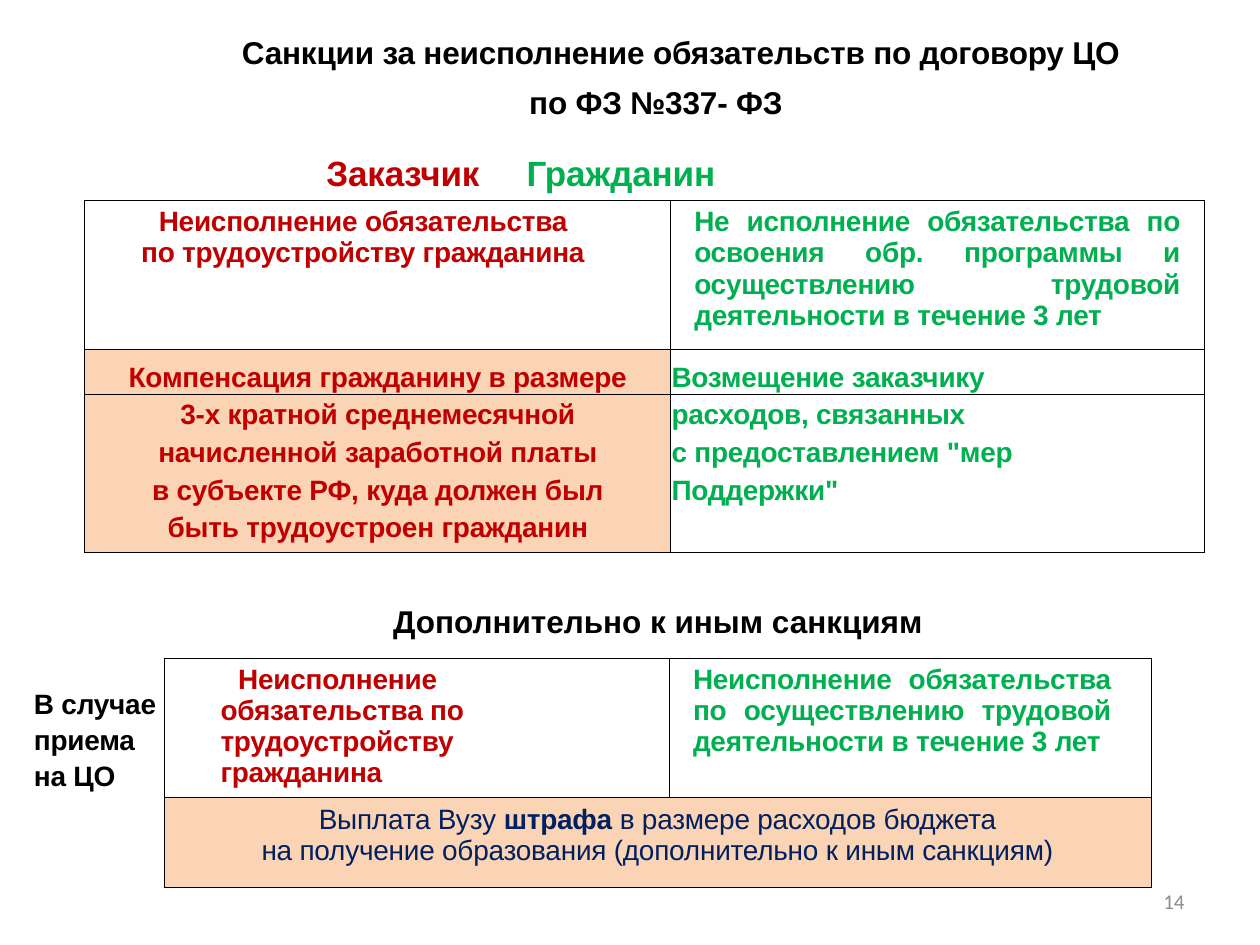
from lxml import etree
from pptx import Presentation
from pptx.dml.color import RGBColor
from pptx.enum.text import MSO_ANCHOR as Anchor, MSO_AUTO_SIZE as AutoSize, PP_ALIGN as Align
from pptx.oxml.ns import qn
from pptx.util import Inches, Pt

BLACK = RGBColor(0x00, 0x00, 0x00)
WHITE = RGBColor(0xFF, 0xFF, 0xFF)
RED = RGBColor(0xC0, 0x00, 0x00)
GREEN = RGBColor(0x00, 0xB0, 0x50)
NAVY = RGBColor(0x00, 0x20, 0x60)
PEACH = RGBColor(0xFB, 0xD4, 0xB5)
GREY = RGBColor(0x8C, 0x8C, 0x8C)


def write(frame, *parts, size=16, color=BLACK, bold=True, font="Arial", align=Align.LEFT,
          left=0, first=0, before=0, spacing=1.0, tab=None, tracking=-0.1):
    """Add one paragraph; a part is a text or a (text, font overrides) pair."""
    paragraph = frame.paragraphs[0]
    if paragraph.runs:
        paragraph = frame.add_paragraph()
    properties = paragraph._p.get_or_add_pPr()
    properties.set("marL", str(Inches(left)))
    properties.set("indent", str(Inches(first)))
    if tab is not None:
        tabs = etree.SubElement(properties, qn("a:tabLst"))
        etree.SubElement(tabs, qn("a:tab"), pos=str(Inches(tab)), algn="l")
    paragraph.alignment = align
    paragraph.line_spacing = spacing
    paragraph.space_before = Pt(before)
    for part in parts:
        text, overrides = (part, {}) if isinstance(part, str) else part
        run = paragraph.add_run()
        run.text = text
        run.font.name = font
        run.font.size = Pt(size)
        run.font.bold = overrides.get("bold", bold)
        run.font.underline = overrides.get("underline", False)
        run.font.color.rgb = overrides.get("color", color)
        run._r.get_or_add_rPr().set("spc", str(round(tracking * 100)))


def set_frame(frame, top=0.0, side=0.0, anchor=Anchor.TOP):
    frame.word_wrap = True
    frame.auto_size = AutoSize.NONE
    frame.vertical_anchor = anchor
    frame.margin_left = frame.margin_right = Inches(side)
    frame.margin_top, frame.margin_bottom = Inches(top), 0
    return frame


def add_text(slide, box, **layout):
    return set_frame(slide.shapes.add_textbox(*map(Inches, box)).text_frame, **layout)


def format_cell(cell, fill, borders, top=0.0, right=0.0):
    """Set fill and margins; borders maps a side (L, R, T, B) to its width."""
    cell.margin_left = cell.margin_bottom = 0
    cell.margin_top, cell.margin_right = Inches(top), Inches(right)
    properties = cell._tc.get_or_add_tcPr()
    for side in "LRTB":
        width = borders.get(side, 0)
        line = etree.SubElement(properties, qn(f"a:ln{side}"), w=str(Pt(width)))
        if width:
            solid = etree.SubElement(line, qn("a:solidFill"))
            etree.SubElement(solid, qn("a:srgbClr"), val=str(BLACK))
        else:
            etree.SubElement(line, qn("a:noFill"))
    cell.fill.solid()
    cell.fill.fore_color.rgb = fill
    return cell.text_frame


def add_grid(slide, box, widths, heights):
    grid = slide.shapes.add_table(len(heights), len(widths), *map(Inches, box)).table
    grid.first_row = grid.horz_banding = False
    for column, width in zip(grid.columns, widths):
        column.width = Inches(width)
    for row, height in zip(grid.rows, heights):
        row.height = Inches(height)
    return grid


def add_breaches(grid, customer_right, citizen_text, citizen_right):
    """Fill the top row: the breach of the customer and that of the citizen."""
    edges = dict(L=0.25, R=0.25, T=0.25, B=0.5)
    customer = format_cell(grid.cell(0, 0), WHITE, edges, 0.05, customer_right)
    write(customer, "Неисполнение обязательства по трудоустройству гражданина",
          color=RED, left=0.45, first=0.14)
    citizen = format_cell(grid.cell(0, 1), WHITE, edges, 0.05, citizen_right)
    write(citizen, citizen_text, color=GREEN, left=0.19, align=Align.JUSTIFY)


def add_heading(slide, box):
    title = slide.shapes.title
    title.left, title.top, title.width, title.height = map(Inches, box)
    frame = set_frame(title.text_frame, top=0.1)
    write(frame, "Санкции за неисполнение обязательств по договору ЦО", size=18, left=1.74)
    write(frame, "по ФЗ №337- ФЗ", size=18, left=4.02, before=6.9)
    write(frame, ("Заказчик\t", {"color": RED}), ("Гражданин", {"color": GREEN}),
          size=20, first=2.41, tab=7.11, before=17.7)


def add_sanctions(slide, box):
    grid = add_grid(slide, box, [4.65, 4.24], [1.18, 0.36, 0.3, 0.3, 0.3, 0.35])
    add_breaches(grid, 0.6, "Не исполнение обязательства по освоения обр. программы и "
                 "осуществлению трудовой деятельности в течение 3 лет", 0.19)
    lines = [
        ("Компенсация гражданину в размере", "Возмещение заказчику"),
        ("3-х кратной среднемесячной", "расходов, связанных"),
        ("начисленной заработной платы", "с предоставлением \"мер"),
        ("в субъекте РФ, куда должен был", "Поддержки\""),
        ("быть трудоустроен гражданин", ""),
    ]
    styles = [(PEACH, RED, Align.CENTER), (WHITE, GREEN, Align.JUSTIFY)]
    for row, texts in enumerate(lines, start=1):
        opening = row == 1
        edges = dict(L=0.25, R=0.25)
        if opening:
            edges.update(T=0.5, B=0.25)
        elif row == 2:
            edges.update(T=0.25)
        elif row == len(lines):
            edges.update(B=0.25)
        for column, (text, (fill, color, align)) in enumerate(zip(texts, styles)):
            frame = format_cell(grid.cell(row, column), fill, edges, 0.05 if opening else 0)
            if text:
                write(frame, text, color=color, align=align, left=0.01,
                      spacing=Pt(21.6 if opening else 20.6))


def add_extra_sanctions(slide, box):
    grid = add_grid(slide, box, [4.01, 3.83], [1.11, 0.71])
    add_breaches(grid, 0.8, "Неисполнение обязательства по осуществлению трудовой "
                 "деятельности в течение 3 лет", 0.32)
    # Fine paid to the university
    grid.cell(1, 0).merge(grid.cell(1, 1))
    edges = dict(L=0.25, R=0.25, T=0.5, B=0.25)
    format_cell(grid.cell(1, 1), PEACH, edges)
    fine = format_cell(grid.cell(1, 0), PEACH, edges, 0.05)
    style = dict(color=NAVY, bold=False, align=Align.CENTER)
    write(fine, "Выплата Вузу ", ("штрафа", {"bold": True}),
          " в размере расходов бюджета", **style)
    write(fine, "на получение образования (дополнительно к иным санкциям)", **style)


def add_admission_note(slide, box):
    write(add_text(slide, box), "В случае приема", (" ", {"underline": True}), "на ЦО",
          left=0.27, spacing=1.07)


def add_subheading(slide, box):
    write(add_text(slide, box, top=0.01), "Дополнительно к иным санкциям",
          size=18, left=0.01, tracking=0)


def add_page_number(slide, box):
    write(add_text(slide, box, side=0.1, anchor=Anchor.MIDDLE), "14", size=12, font="Calibri",
          color=GREY, bold=False, align=Align.RIGHT, tracking=0)


def main():
    deck = Presentation()
    deck.slide_width, deck.slide_height = Inches(10), Inches(7.5)
    slide = deck.slides.add_slide(deck.slide_layouts[5])
    add_heading(slide, (0.18, 0.16, 9.53, 1.39))
    add_sanctions(slide, (0.67, 1.59, 8.89, 2.79))
    add_subheading(slide, (3.11, 4.77, 4.78, 0.32))
    add_extra_sanctions(slide, (1.3, 5.22, 7.84, 1.82))
    add_admission_note(slide, (0, 5.43, 1.26, 0.82))
    add_page_number(slide, (7.17, 6.95, 2.33, 0.4))
    deck.save("out.pptx")


if __name__ == "__main__":
    main()
